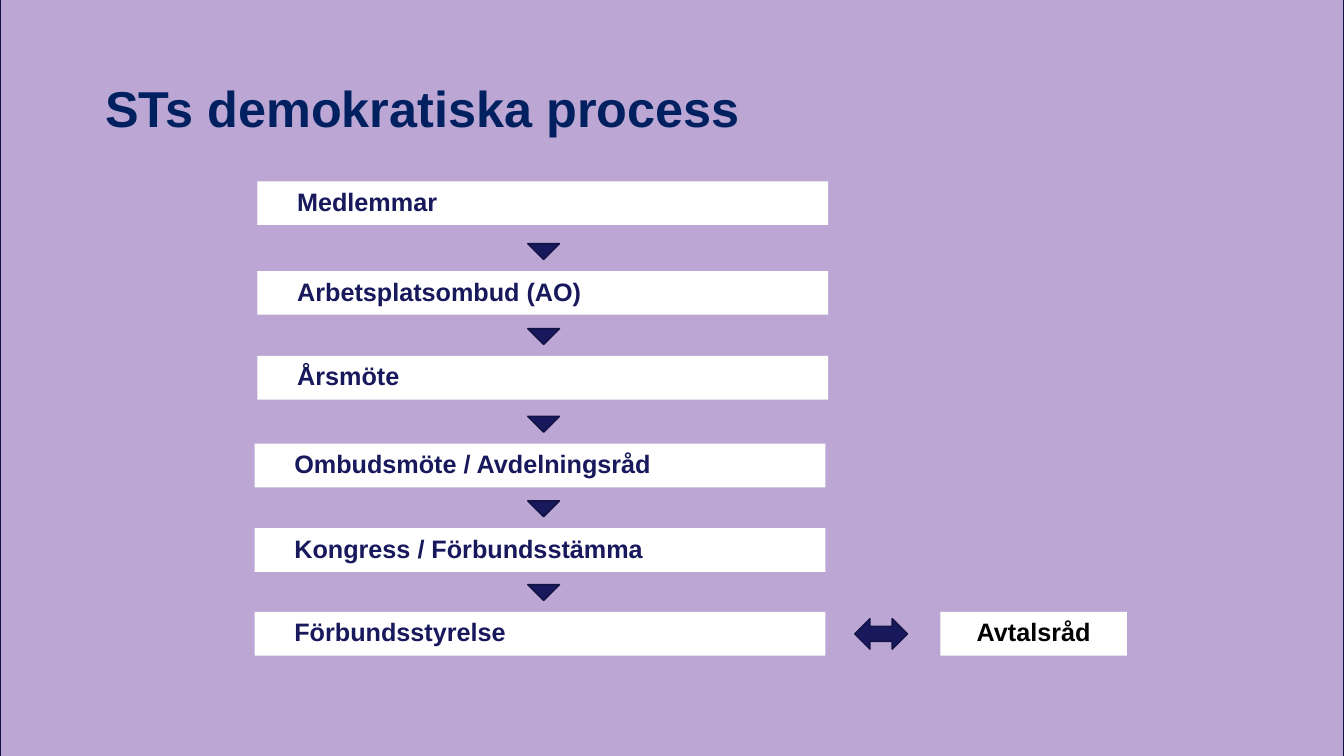
from lxml import etree
from pptx import Presentation
from pptx import util as u
from pptx.dml.color import RGBColor
from pptx.enum import shapes, text
from pptx.oxml.ns import qn

NAVY = "18185C"
EDGE = "121244"
WHITE = "FFFFFF"
KIND = shapes.MSO_SHAPE
STEPS = [
    ("Medlemmar", 0.07, 0),
    ("Arbetsplatsombud (AO)", 0.07, 2.26),
    ("Årsmöte", 0.07, 4.4),
    ("Ombudsmöte / Avdelningsråd", 0, 6.61),
    ("Kongress / Förbundsstämma", 0, 8.74),
    ("Förbundsstyrelse", 0, 10.85),
]
BAR_W, BAR_H = 14.38, 1.1


def color(code):
    return RGBColor.from_string(code)


def draw(slide, kind, box, fill, line=None):
    shape = slide.shapes.add_shape(kind, *map(u.Cm, box))
    shape.shadow.inherit = False
    shape.fill.solid()
    shape.fill.fore_color.rgb = color(fill)
    if line:
        shape.line.color.rgb = color(line)
        shape.line.width = u.Pt(1)
    else:
        shape.line.fill.background()
    return shape


def write(frame, words, size, code, align=text.PP_ALIGN.LEFT):
    frame.word_wrap = True
    frame.text = words
    para = frame.paragraphs[0]
    para.alignment = align
    para.line_spacing = 0.9
    font = para.runs[0].font
    font.name = "Arial"
    font.size = u.Pt(size)
    font.bold = True
    font.color.rgb = color(code)


def label(slide, box, words, code, inset, align):
    frame = draw(slide, KIND.RECTANGLE, box, WHITE).text_frame
    frame.margin_left = u.Cm(inset)
    frame.margin_right = frame.margin_top = frame.margin_bottom = u.Cm(0.03)
    frame.vertical_anchor = text.MSO_ANCHOR.MIDDLE
    write(frame, words, 18, code, align)


def backdrop(slide, box):
    panel = draw(slide, KIND.RECTANGLE, box, "B59ED0", EDGE)
    tint = panel.fill._xPr.find(qn("a:solidFill"))[0]
    etree.SubElement(tint, qn("a:alpha")).set("val", "90000")


def heading(slide, box):
    title = slide.shapes.add_textbox(*map(u.Cm, box))
    write(title.text_frame, "STs demokratiska process", 36, "002060")


def chain(slide, left, top):
    for i, (words, dx, dy) in enumerate(STEPS):
        box = (left + dx, top + dy, BAR_W, BAR_H)
        label(slide, box, words, NAVY, 1, text.PP_ALIGN.LEFT)
        if i:
            spot = (left + 6.88, top + dy - 0.69, 0.8, 0.4)
            arrow = draw(slide, KIND.ISOSCELES_TRIANGLE, spot, NAVY, EDGE)
            arrow.rotation = 180


def council(slide, left, top):
    draw(slide, KIND.LEFT_RIGHT_ARROW, (left, top + 0.17, 1.33, 0.77), NAVY, EDGE)
    box = (left + 2.16, top, 4.7, BAR_H)
    label(slide, box, "Avtalsråd", "000000", 0.03, text.PP_ALIGN.CENTER)


def main():
    deck = Presentation()
    deck.slide_width, deck.slide_height = u.Cm(33.87), u.Cm(19.05)
    slide = deck.slides.add_slide(deck.slide_layouts[6])
    backdrop(slide, (0, -0.36, 33.87, 19.5))
    heading(slide, (2.4, 2, 21.3, 3.68))
    left, top = 6.42, 4.57
    chain(slide, left, top)
    council(slide, left + BAR_W + 0.74, top + STEPS[-1][2])
    deck.save("out.pptx")


if __name__ == "__main__":
    main()
